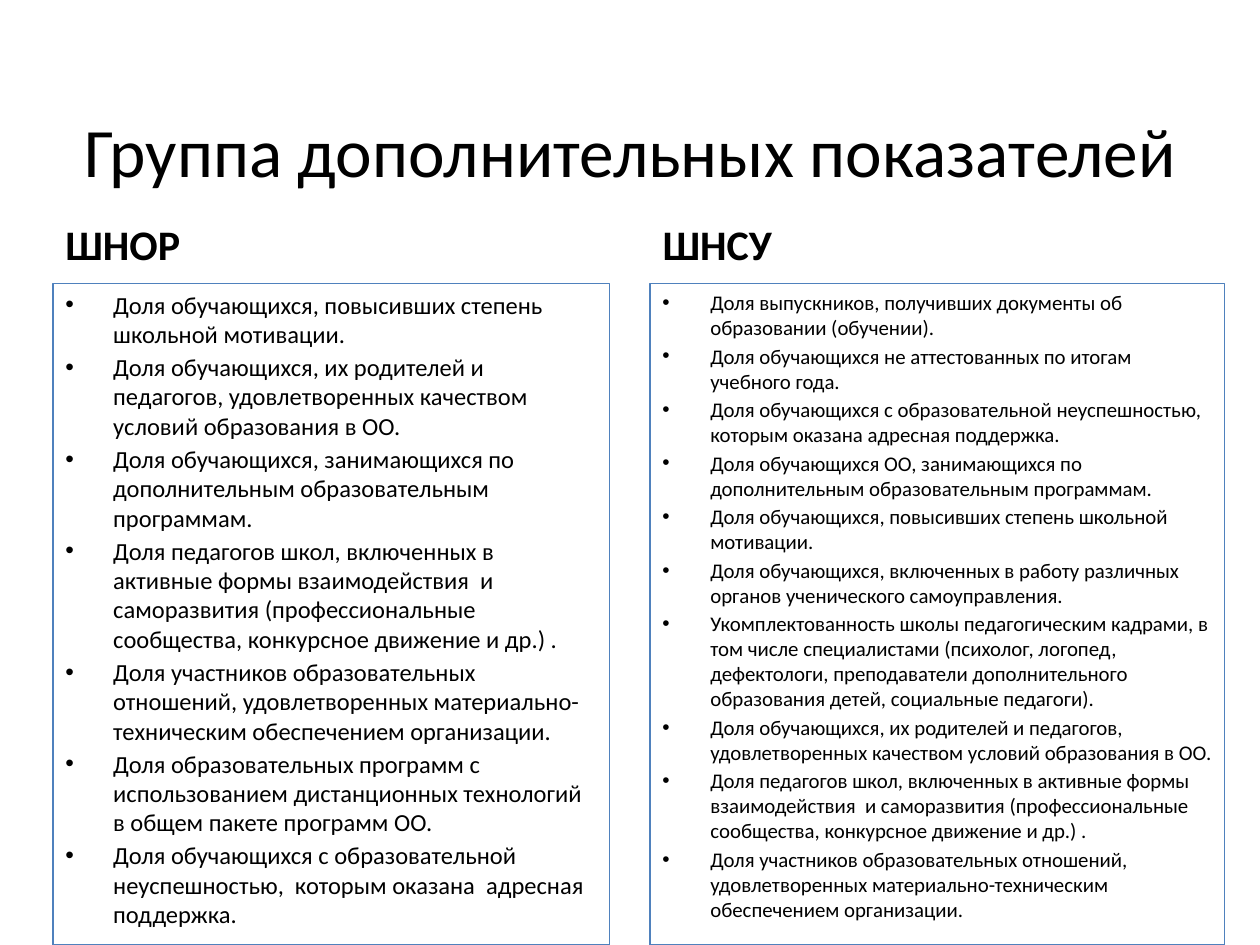
from lxml.etree import SubElement
from pptx import Presentation
from pptx.dml.color import RGBColor
from pptx.enum.shapes import MSO_SHAPE
from pptx.enum.text import MSO_ANCHOR, PP_ALIGN
from pptx.oxml.ns import qn
from pptx.util import Inches, Pt

COLORS = {"text": "000000", "border": "4F81BD"}
FONT = "Calibri"
INDENT = Inches(0.38)

COLUMNS = [
    {
        "heading": "ШНОР", "left": 0.42, "width": 4.42, "size": 14,
        "items": [
            "Доля обучающихся, повысивших степень школьной мотивации.",
            "Доля обучающихся, их родителей и педагогов, удовлетворенных качеством условий образования в ОО.",
            "Доля обучающихся, занимающихся по дополнительным образовательным программам.",
            "Доля педагогов школ, включенных в активные формы взаимодействия  и саморазвития "
            "(профессиональные сообщества, конкурсное движение и др.) .",
            "Доля участников образовательных отношений, удовлетворенных материально-техническим "
            "обеспечением организации.",
            "Доля образовательных программ с использованием дистанционных технологий "
            "в общем пакете программ ОО.",
            "Доля обучающихся с образовательной неуспешностью,  которым оказана  адресная поддержка.",
        ],
    },
    {
        "heading": "ШНСУ", "left": 5.16, "width": 4.56, "size": 11.9,
        "items": [
            "Доля выпускников, получивших документы об образовании (обучении).",
            "Доля обучающихся не аттестованных по итогам учебного года.",
            "Доля обучающихся с образовательной неуспешностью, которым оказана адресная поддержка.",
            "Доля обучающихся ОО, занимающихся по дополнительным образовательным программам.",
            "Доля обучающихся, повысивших степень школьной мотивации.",
            "Доля обучающихся, включенных в работу различных органов ученического самоуправления.",
            "Укомплектованность школы педагогическим кадрами, в том числе специалистами "
            "(психолог, логопед, дефектологи, преподаватели дополнительного образования детей, "
            "социальные педагоги).",
            "Доля обучающихся, их родителей и педагогов, удовлетворенных качеством условий образования в ОО.",
            "Доля педагогов школ, включенных в активные формы взаимодействия  и саморазвития "
            "(профессиональные сообщества, конкурсное движение и др.) .",
            "Доля участников образовательных отношений, удовлетворенных материально-техническим "
            "обеспечением организации.",
        ],
    },
]


def style(paragraph, size, bold=False):
    paragraph.font.name = FONT
    paragraph.font.size = Pt(size)
    paragraph.font.bold = bold
    paragraph.font.color.rgb = RGBColor.from_string(COLORS["text"])


def add_bullet(paragraph):
    properties = paragraph._p.get_or_add_pPr()
    properties.set("marL", str(INDENT))
    properties.set("indent", str(-INDENT))
    SubElement(properties, qn("a:buFont")).set("typeface", "Arial")
    SubElement(properties, qn("a:buChar")).set("char", "•")


presentation = Presentation()
presentation.slide_width = Inches(10)
presentation.slide_height = Inches(7.5)
slide = presentation.slides.add_slide(presentation.slide_layouts[5])

title = slide.shapes.title
title.left, title.top = Inches(0.42), Inches(0.68)
title.width, title.height = Inches(9.17), Inches(1.02)
title.text_frame.text = "Группа дополнительных показателей"
title.text_frame.vertical_anchor = MSO_ANCHOR.MIDDLE
title.text_frame.paragraphs[0].alignment = PP_ALIGN.CENTER
style(title.text_frame.paragraphs[0], 39.6)

for column in COLUMNS:
    left = Inches(column["left"])
    heading = slide.shapes.add_textbox(left, Inches(1.55), Inches(4.42), Inches(0.63))
    heading.text_frame.word_wrap = True
    heading.text_frame.vertical_anchor = MSO_ANCHOR.BOTTOM
    heading.text_frame.text = column["heading"]
    style(heading.text_frame.paragraphs[0], 24, bold=True)

    box = slide.shapes.add_shape(
        MSO_SHAPE.RECTANGLE, left, Inches(2.25), Inches(column["width"]), Inches(5.25))
    box.shadow.inherit = False
    box.fill.background()
    box.line.color.rgb = RGBColor.from_string(COLORS["border"])
    box.line.width = Pt(0.75)
    frame = box.text_frame
    frame.word_wrap = True
    frame.vertical_anchor = MSO_ANCHOR.TOP
    frame.text = "\n".join(column["items"])
    for index, paragraph in enumerate(frame.paragraphs):
        paragraph.alignment = PP_ALIGN.LEFT
        paragraph.space_before = Pt(2 if index else 0)
        add_bullet(paragraph)
        style(paragraph, column["size"])

presentation.save("out.pptx")
